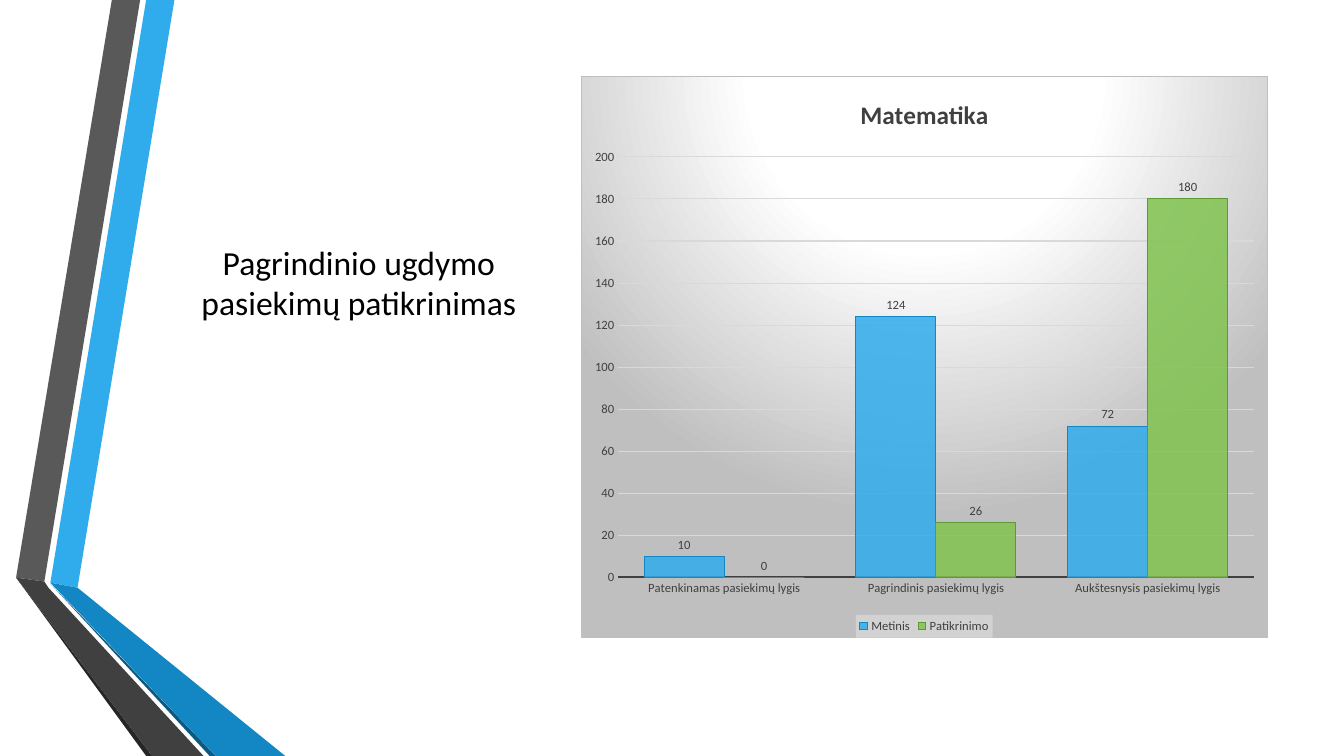
from dataclasses import dataclass

from lxml.etree import SubElement
from pptx import Presentation
from pptx.chart.data import CategoryChartData
from pptx.dml.color import RGBColor
from pptx.enum.chart import XL_CHART_TYPE, XL_LABEL_POSITION, XL_LEGEND_POSITION, XL_TICK_MARK
from pptx.enum.text import MSO_ANCHOR, PP_ALIGN
from pptx.oxml import parse_xml
from pptx.oxml.ns import nsdecls, qn
from pptx.util import Pt

FONT = "Calibri"
COLORS = {
    "black": "000000", "text": "404040", "grid": "D9D9D9", "border": "BFBFBF",
    "white": "FFFFFF", "legend": "F2F2F2",
    "blue": "30ACEC", "blue_dark": "1287C3", "blue_shade": "0C5A82",
    "green": "80C34F", "green_dark": "5F9934",
    "gray": "595959", "gray_dark": "404040", "gray_shade": "262626",
}


@dataclass
class Ribbon:
    color: str
    points: list[tuple[float, float]]


@dataclass
class Level:
    name: str
    values: tuple[int, ...]
    fill: str
    line: str


RIBBONS = [
    Ribbon("blue", [(36, 416.2), (55.4, 419.8), (124.6, 0), (104.4, 0)]),
    Ribbon("gray", [(100.1, 0), (79.9, 0), (11.5, 412.6), (31.7, 415.4)]),
    Ribbon("gray_shade", [(11.5, 412.6), (104.4, 540), (108.7, 540)]),
    Ribbon("blue_shade", [(36, 416.9), (149.8, 540), (154.1, 540)]),
    Ribbon("blue_dark", [(36, 416.2), (154.1, 540), (203.8, 540), (55.4, 419.8)]),
    Ribbon("gray_dark", [(145.4, 540), (34.6, 419.8), (31.7, 415.4), (11.5, 412.6), (108.7, 540)]),
]
CATEGORIES = ["Patenkinamas pasiekimų lygis", "Pagrindinis pasiekimų lygis",
              "Aukštesnysis pasiekimų lygis"]
LEVELS = [
    Level("Metinis", (10, 124, 72), "blue", "blue_dark"),
    Level("Patikrinimo", (0, 26, 180), "green", "green_dark"),
]


def rgb(name: str) -> RGBColor:
    return RGBColor.from_string(COLORS[name])


def style_font(font, size: float, color: str, bold: bool = False) -> None:
    font.name = FONT
    font.size = Pt(size)
    font.bold = bold
    font.color.rgb = rgb(color)


def style_line(line, color: str, width: float) -> None:
    line.color.rgb = rgb(color)
    line.width = Pt(width)


def draw_ribbon(group, ribbon: Ribbon) -> None:
    corners = [(Pt(x), Pt(y)) for x, y in ribbon.points]
    builder = group.shapes.build_freeform(*corners[0])
    builder.add_line_segments(corners[1:], close=True)
    shape = builder.convert_to_shape()
    shape.shadow.inherit = False
    shape.fill.solid()
    shape.fill.fore_color.rgb = rgb(ribbon.color)
    shape.line.fill.background()


def draw_heading(page, text: str) -> None:
    box = page.shapes.add_textbox(Pt(116.6), Pt(126), Pt(279.4), Pt(108))
    frame = box.text_frame
    frame.word_wrap = True
    frame.vertical_anchor = MSO_ANCHOR.BOTTOM
    frame.text = text
    para = frame.paragraphs[0]
    para.alignment = PP_ALIGN.CENTER
    style_font(para.runs[0].font, 24, "black")


def style_series(series, level: Level) -> None:
    series.format.fill.solid()
    series.format.fill.fore_color.rgb = rgb(level.fill)
    color = series.format.fill._xPr.find(f".//{qn('a:srgbClr')}")
    SubElement(color, qn("a:alpha"), val="85000")
    style_line(series.format.line, level.line, 0.75)
    labels = series.data_labels
    labels.show_value = True
    labels.position = XL_LABEL_POSITION.OUTSIDE_END
    style_font(labels.font, 9, "text")


def style_axes(chart) -> None:
    for axis in (chart.category_axis, chart.value_axis):
        axis.major_tick_mark = axis.minor_tick_mark = XL_TICK_MARK.NONE
        style_font(axis.tick_labels.font, 9, "text")
    style_line(chart.category_axis.format.line, "text", 1.5)
    values = chart.value_axis
    values.minimum_scale, values.maximum_scale, values.major_unit = 0, 200, 20
    values.format.line.fill.background()
    style_line(values.major_gridlines.format.line, "grid", 0.75)


def add_chart_background(chart) -> None:
    stops = "".join(
        f'<a:gs pos="{place * 1000}"><a:srgbClr val="{COLORS[name]}"/></a:gs>'
        for place, name in ((0, "white"), (39, "white"), (100, "border")))
    chart._chartSpace.find(qn("c:chart")).addnext(parse_xml(
        f'<c:spPr {nsdecls("c", "a")}><a:gradFill><a:gsLst>{stops}</a:gsLst>'
        '<a:path path="circle"><a:fillToRect l="50000" t="-80000" r="50000" b="180000"/></a:path>'
        f'</a:gradFill><a:ln w="{Pt(0.75)}"><a:solidFill><a:srgbClr val="{COLORS["border"]}"/>'
        '</a:solidFill></a:ln></c:spPr>'))


def add_legend_background(legend) -> None:
    legend._element.find(qn("c:overlay")).addnext(parse_xml(
        f'<c:spPr {nsdecls("c", "a")}><a:solidFill><a:srgbClr val="{COLORS["legend"]}">'
        '<a:alpha val="39000"/></a:srgbClr></a:solidFill></c:spPr>'))


def place_plot(chart) -> None:
    area = chart._chartSpace.find(f".//{qn('c:plotArea')}")
    for layout in area.findall(qn("c:layout")):
        area.remove(layout)
    places = "".join(f'<c:{key} val="{value}"/>' for key, value in (
        ("layoutTarget", "inner"), ("xMode", "edge"), ("yMode", "edge"),
        ("x", 0.054), ("y", 0.144), ("w", 0.926), ("h", 0.749)))
    area.insert(0, parse_xml(
        f'<c:layout {nsdecls("c")}><c:manualLayout>{places}</c:manualLayout></c:layout>'))


def draw_chart(page) -> None:
    data = CategoryChartData()
    data.categories = CATEGORIES
    for level in LEVELS:
        data.add_series(level.name, level.values)
    chart = page.shapes.add_chart(XL_CHART_TYPE.COLUMN_CLUSTERED, Pt(414.7), Pt(54),
                                  Pt(491), Pt(401.8), data).chart
    style_font(chart.font, 10, "black")
    chart.has_title = True
    frame = chart.chart_title.text_frame
    frame.text = "Matematika"
    style_font(frame.paragraphs[0].runs[0].font, 18, "text", bold=True)
    chart.chart_title.include_in_layout = False

    # Columns
    plot = chart.plots[0]
    plot.gap_width, plot.overlap = 65, 0
    plot.vary_by_categories = False
    for series, level in zip(plot.series, LEVELS):
        style_series(series, level)
    style_axes(chart)
    place_plot(chart)

    # Legend and background
    chart.has_legend = True
    chart.legend.position = XL_LEGEND_POSITION.BOTTOM
    chart.legend.include_in_layout = False
    style_font(chart.legend.font, 9, "text")
    add_legend_background(chart.legend)
    add_chart_background(chart)


def main() -> None:
    deck = Presentation()
    deck.slide_width, deck.slide_height = Pt(960), Pt(540)
    page = deck.slides.add_slide(deck.slide_layouts[6])

    # Folded ribbons on the left
    group = page.shapes.add_group_shape()
    for ribbon in RIBBONS:
        draw_ribbon(group, ribbon)

    # Heading and chart
    draw_heading(page, "Pagrindinio ugdymo pasiekimų patikrinimas")
    draw_chart(page)
    deck.save("out.pptx")


if __name__ == "__main__":
    main()
